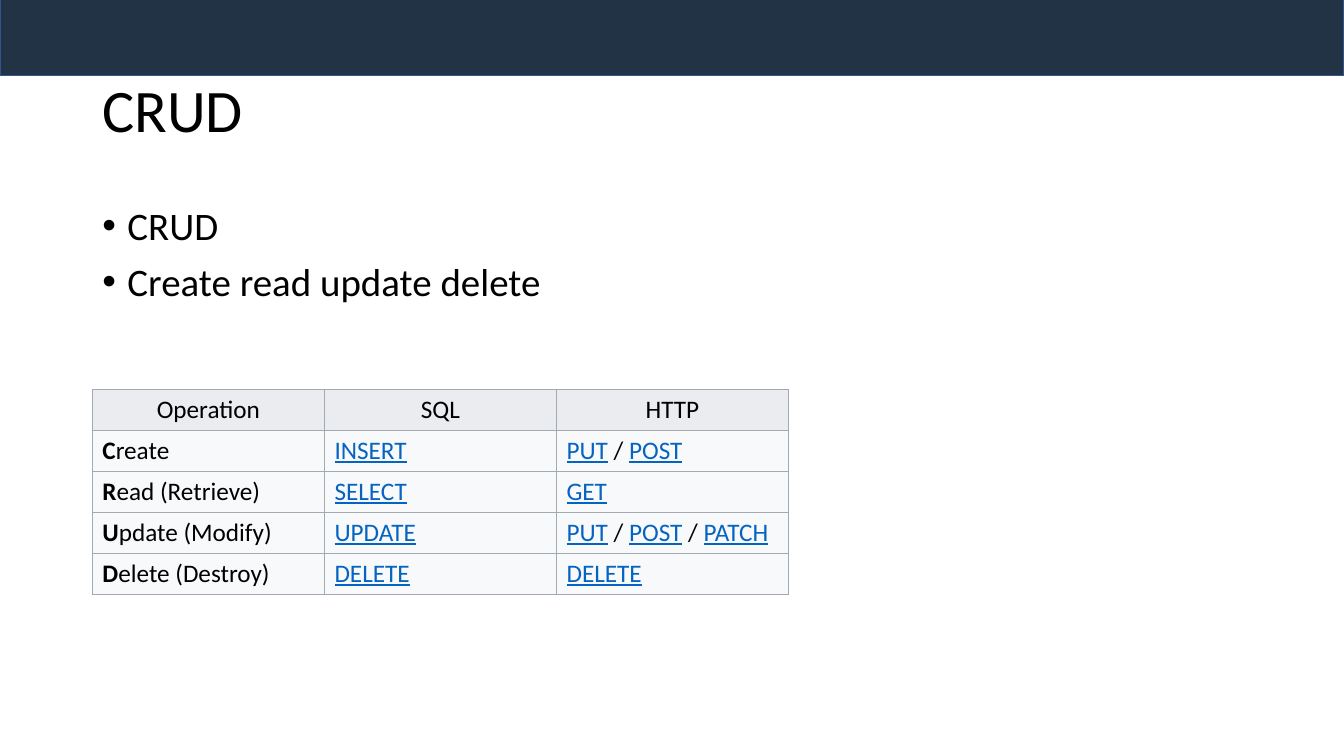
from typing import NamedTuple

from lxml.etree import SubElement as Sub
from pptx import Presentation
from pptx.dml.color import RGBColor
from pptx.enum.shapes import MSO_SHAPE as Shape
from pptx.enum.text import MSO_ANCHOR as Anchor, PP_ALIGN as Align
from pptx.oxml.ns import qn
from pptx.util import Pt

SCALE = 9525  # EMU per px, 96 px to the inch
BLACK, LINK = "000000", "0563C1"
NAVY, BLUE = "223346", "325491"
HEAD, ROW, EDGE = "EAECF0", "F8F9FA", "A2A9B1"
COL_W, ROW_H = 221, 39
SLASH = " / "


class Box(NamedTuple):
    left: int
    top: int
    width: int
    height: int

    def emu(self) -> list[int]:
        return [px * SCALE for px in self]


class Verb(NamedTuple):
    name: str
    sql: str
    http: str


VERBS = [
    Verb("Create", "INSERT", "PUT / POST"),
    Verb("Read (Retrieve)", "SELECT", "GET"),
    Verb("Update (Modify)", "UPDATE", "PUT / POST / PATCH"),
    Verb("Delete (Destroy)", "DELETE", "DELETE"),
]


def color(code: str) -> RGBColor:
    return RGBColor.from_string(code)


def write(para, text: str, size: float = 18, ink: str = BLACK,
          bold: bool = False, under: bool = False) -> None:
    run = para.add_run()
    run.text = text
    font = run.font
    font.name, font.size = "Calibri", Pt(size)
    font.bold, font.underline = bold, under
    font.color.rgb = color(ink)


def add_bar(slide, box: Box) -> None:
    bar = slide.shapes.add_shape(Shape.RECTANGLE, *box.emu())
    bar.shadow.inherit = False
    bar.fill.solid()
    bar.fill.fore_color.rgb = color(NAVY)
    bar.line.color.rgb = color(BLUE)
    bar.line.width = Pt(1)


def add_text(slide, box: Box, lines: list[str], size: float,
             anchor: Anchor = Anchor.TOP, bullet: bool = False) -> None:
    frame = slide.shapes.add_textbox(*box.emu()).text_frame
    frame.word_wrap = True
    frame.vertical_anchor = anchor
    for i, line in enumerate(lines):
        para = frame.add_paragraph() if i else frame.paragraphs[0]
        para.line_spacing = 0.9
        if i:
            para.space_before = Pt(10)
        if bullet:
            props = para._p.get_or_add_pPr()
            props.set("marL", str(24 * SCALE))
            props.set("indent", str(-24 * SCALE))
            Sub(props, qn("a:buFont"), typeface="Arial")
            Sub(props, qn("a:buChar"), char="•")
        write(para, line, size=size)


def style(cell, fill: str) -> None:
    """Set the anchor, the four borders and the fill of a cell."""
    cell.vertical_anchor = Anchor.MIDDLE
    props = cell._tc.get_or_add_tcPr()
    for side in ("lnL", "lnR", "lnT", "lnB"):
        line = Sub(props, qn(f"a:{side}"), w=str(Pt(0.75)))
        Sub(Sub(line, qn("a:solidFill")), qn("a:srgbClr"), val=EDGE)
    cell.fill.solid()
    cell.fill.fore_color.rgb = color(fill)


def add_links(para, text: str) -> None:
    """Write words as links, with plain slashes between them."""
    for i, word in enumerate(text.split(SLASH)):
        if i:
            write(para, SLASH)
        write(para, word, ink=LINK, under=True)


def add_grid(slide, left: int, top: int) -> None:
    titles = ["Operation", "SQL", "HTTP"]
    rows, cols = len(VERBS) + 1, len(titles)
    box = Box(left, top, cols * COL_W, rows * ROW_H)
    table = slide.shapes.add_table(rows, cols, *box.emu()).table
    for cell, title in zip(table.rows[0].cells, titles):
        style(cell, HEAD)
        para = cell.text_frame.paragraphs[0]
        para.alignment = Align.CENTER
        write(para, title)
    for r, verb in enumerate(VERBS, 1):
        cells = list(table.rows[r].cells)
        for cell in cells:
            style(cell, ROW)
        name, sql, http = [c.text_frame.paragraphs[0] for c in cells]
        write(name, verb.name[0], bold=True)
        write(name, verb.name[1:])
        add_links(sql, verb.sql)
        add_links(http, verb.http)


def main() -> None:
    deck = Presentation()
    deck.slide_width, deck.slide_height = 1280 * SCALE, 720 * SCALE
    slide = deck.slides.add_slide(deck.slide_layouts[6])
    add_bar(slide, Box(0, -3, 1280, 75))
    add_text(slide, Box(88, 38, 1104, 139), ["CRUD"], 43.1, Anchor.MIDDLE)
    add_text(slide, Box(88, 192, 1104, 457),
             ["CRUD", "Create read update delete"], 27.8, bullet=True)
    add_grid(slide, 88, 371)
    deck.save("out.pptx")


if __name__ == "__main__":
    main()
